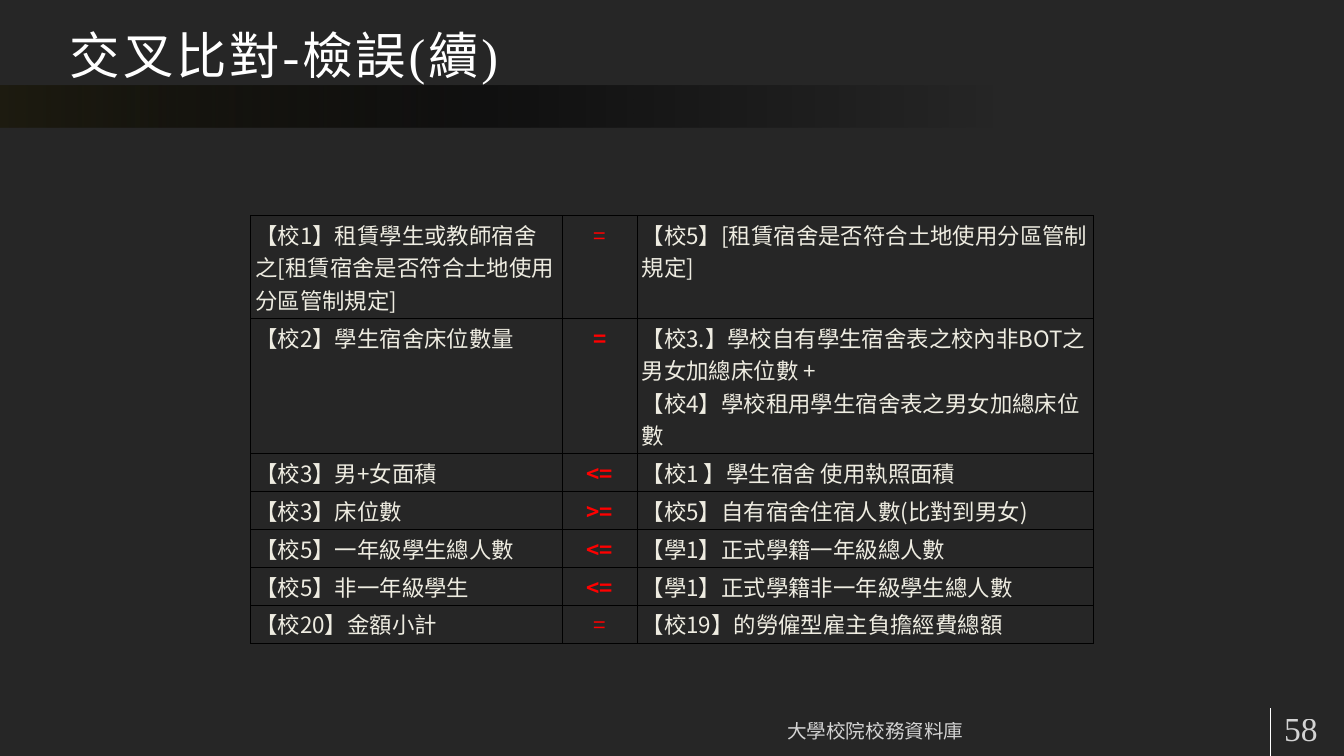
from dataclasses import dataclass
from typing import NamedTuple

from lxml.etree import SubElement
from pptx import Presentation
from pptx.dml.color import RGBColor
from pptx.enum.shapes import MSO_CONNECTOR, MSO_SHAPE
from pptx.enum.text import MSO_ANCHOR as Anchor, MSO_AUTO_SIZE, PP_ALIGN as Align
from pptx.oxml.ns import qn
from pptx.util import Inches, Pt


@dataclass(frozen=True)
class Theme:
    background: str = "262626"
    white: str = "FFFFFF"
    black: str = "000000"
    band: str = "1E1C11"
    cell_text: str = "EEECE1"
    operator: str = "FF0000"
    latin_font: str = "Times New Roman"
    cjk_font: str = "Noto Sans CJK SC"
    title_size: int = 54
    page_size: int = 36
    table_size: int = 24
    footer_size: int = 21


class Check(NamedTuple):
    left: str
    operator: str
    right: str
    height: float = 0.47
    bold: bool = True


class Label(NamedTuple):
    text: str
    left: float
    width: float
    size: int
    align: Align
    anchor: Anchor


THEME = Theme()
COLUMN_WIDTHS = (4.64, 1.11, 6.79)
CHECKS = (
    Check("【校1】租賃學生或教師宿舍之[租賃宿舍是否符合土地使用分區管制規定]", "=",
          "【校5】[租賃宿舍是否符合土地使用分區管制規定]", 1.27, False),
    Check("【校2】學生宿舍床位數量", "=",
          "【校3.】學校自有學生宿舍表之校內非BOT之男女加總床位數 +\n"
          "【校4】學校租用學生宿舍表之男女加總床位數", 1.68),
    Check("【校3】男+女面積", "<=", "【校1 】學生宿舍 使用執照面積"),
    Check("【校3】床位數", ">=", "【校5】自有宿舍住宿人數(比對到男女)"),
    Check("【校5】一年級學生總人數", "<=", "【學1】正式學籍一年級總人數"),
    Check("【校5】非一年級學生", "<=", "【學1】正式學籍非一年級學生總人數"),
    Check("【校20】金額小計", "=", "【校19】的勞僱型雇主負擔經費總額", bold=False),
)
LABELS = (
    Label("大學校院校務資料庫", 7.16, 11.73, THEME.footer_size, Align.CENTER, Anchor.BOTTOM),
    Label("58", 18.93, 1.15, THEME.page_size, Align.LEFT, Anchor.MIDDLE),
)


def rgb(color: str) -> RGBColor:
    return RGBColor.from_string(color)


def style_paragraph(paragraph, size: int, color: str, font_name: str,
                    align: Align = Align.LEFT, bold: bool = False):
    """Format a paragraph and return its character properties element."""
    paragraph.alignment = align
    font = paragraph.font
    font.size, font.bold, font.name = Pt(size), bold, font_name
    font.color.rgb = rgb(color)
    properties = paragraph._p.pPr.find(qn("a:defRPr"))
    SubElement(properties, qn("a:ea"), typeface=THEME.cjk_font)
    return properties


def set_frame(frame, anchor: Anchor) -> None:
    frame.word_wrap = True
    frame.auto_size = MSO_AUTO_SIZE.NONE
    frame.vertical_anchor = anchor
    frame.margin_left = frame.margin_right = Inches(0.18)
    frame.margin_top = frame.margin_bottom = Inches(0.09)


def add_band(slide) -> None:
    band = slide.shapes.add_shape(
        MSO_SHAPE.RECTANGLE, 0, Inches(1.27), Inches(20), Inches(0.63))
    band.shadow.inherit = False
    band.line.fill.background()
    band.fill.gradient()
    band.fill.gradient_angle = 0
    stops = band._element.spPr.find(qn("a:gradFill")).find(qn("a:gsLst"))
    for stop in list(stops):
        stops.remove(stop)
    for position, color, opacity in ((0, THEME.band, 100), (39, THEME.black, 54),
                                     (74, THEME.black, 0)):
        stop = SubElement(stops, qn("a:gs"), pos=str(position * 1000))
        fill = SubElement(stop, qn("a:srgbClr"), val=color)
        SubElement(fill, qn("a:alpha"), val=str(opacity * 1000))
    slide.shapes._spTree.insert(2, band._element)  # behind the title


def add_divider(slide) -> None:
    line = slide.shapes.add_connector(
        MSO_CONNECTOR.STRAIGHT, Inches(18.9), Inches(10.54), Inches(18.9), Inches(11.25))
    line.line.color.rgb = rgb(THEME.white)
    line.line.width = Pt(0.75)
    SubElement(line._element.spPr, qn("a:effectLst"))


def set_title(slide, text: str) -> None:
    title = slide.shapes.title
    title.left, title.top, title.width, title.height = map(Inches, (0.86, 0, 18, 1.35))
    set_frame(title.text_frame, Anchor.BOTTOM)
    title.text_frame.text = text
    properties = style_paragraph(title.text_frame.paragraphs[0], THEME.title_size,
                                 THEME.white, THEME.latin_font)
    properties.set("spc", "300")


def add_label(slide, label: Label) -> None:
    box = slide.shapes.add_textbox(
        Inches(label.left), Inches(10.54), Inches(label.width), Inches(0.6))
    set_frame(box.text_frame, label.anchor)
    box.text_frame.text = label.text
    properties = style_paragraph(box.text_frame.paragraphs[0], label.size,
                                 THEME.white, THEME.latin_font, label.align)
    color = properties.find(qn("a:solidFill")).find(qn("a:srgbClr"))
    SubElement(color, qn("a:alpha"), val="80000")


def fill_cell(cell, text: str, color: str, align: Align, bold: bool) -> None:
    cell.margin_left = cell.margin_right = Inches(0.07)
    cell.margin_top = cell.margin_bottom = Inches(0.04)
    cell.text_frame.text = text
    for paragraph in cell.text_frame.paragraphs:
        style_paragraph(paragraph, THEME.table_size, color, THEME.cjk_font, align, bold)
    # Borders come before the fill in the cell properties
    properties = cell._tc.get_or_add_tcPr()
    for side in ("lnL", "lnR", "lnT", "lnB"):
        border = SubElement(properties, qn(f"a:{side}"), w=str(Pt(1)))
        fill = SubElement(border, qn("a:solidFill"))
        SubElement(fill, qn("a:srgbClr"), val=THEME.black)
    cell.fill.background()


def add_check_table(slide) -> None:
    table = slide.shapes.add_table(
        len(CHECKS), len(COLUMN_WIDTHS), Inches(3.73), Inches(3.21),
        Inches(sum(COLUMN_WIDTHS)), Inches(sum(check.height for check in CHECKS))).table
    table.first_row = table.horz_banding = False
    for column, width in zip(table.columns, COLUMN_WIDTHS):
        column.width = Inches(width)
    for row, check in zip(table.rows, CHECKS):
        row.height = Inches(check.height)
        left, operator, right = row.cells
        fill_cell(left, check.left, THEME.cell_text, Align.LEFT, False)
        fill_cell(operator, check.operator, THEME.operator, Align.CENTER, check.bold)
        fill_cell(right, check.right, THEME.cell_text, Align.LEFT, False)


def main() -> None:
    presentation = Presentation()
    presentation.slide_width, presentation.slide_height = Inches(20), Inches(11.25)
    slide = presentation.slides.add_slide(presentation.slide_layouts[5])
    slide.background.fill.solid()
    slide.background.fill.fore_color.rgb = rgb(THEME.background)

    # Header
    add_band(slide)
    set_title(slide, "交叉比對-檢誤(續)")
    # Footer
    add_divider(slide)
    for label in LABELS:
        add_label(slide, label)
    # Cross-check rules
    add_check_table(slide)
    presentation.save("out.pptx")


if __name__ == "__main__":
    main()
